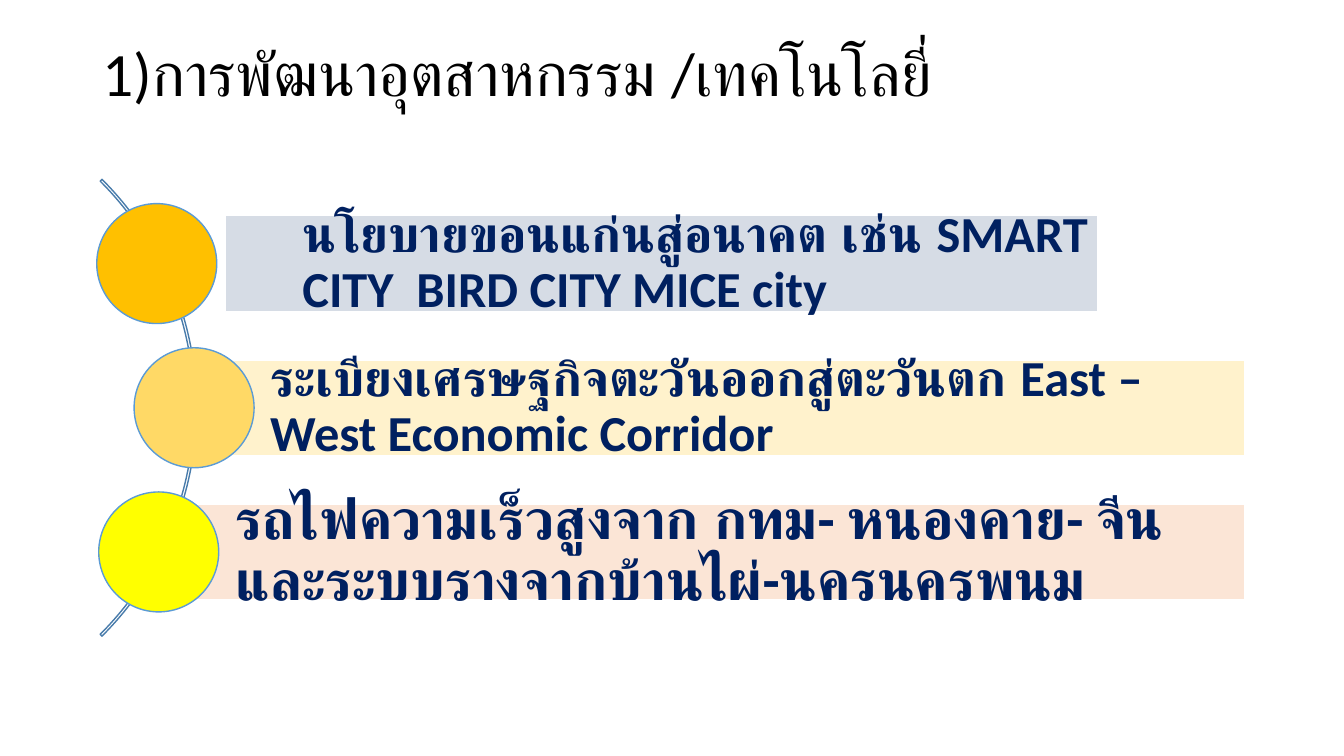
from pptx import Presentation
from pptx.dml.color import RGBColor
from pptx.enum.shapes import MSO_SHAPE as Kind
from pptx.enum.text import MSO_ANCHOR as Anchor, PP_ALIGN as Align
from pptx.util import Inches, Pt

WIDE, HIGH = Inches(13.33), Inches(7.5)
BLACK = RGBColor(0x00, 0x00, 0x00)
WHITE = RGBColor(0xFF, 0xFF, 0xFF)
NAVY = RGBColor(0x00, 0x20, 0x60)
BLUE = RGBColor(0x5B, 0x9B, 0xD5)
STEEL = RGBColor(0x49, 0x7C, 0xAB)
GREY = RGBColor(0xD6, 0xDC, 0xE5)
CREAM = RGBColor(0xFF, 0xF2, 0xCC)
PEACH = RGBColor(0xFB, 0xE5, 0xD6)
AMBER = RGBColor(0xFF, 0xC0, 0x00)
GOLD = RGBColor(0xFF, 0xD9, 0x66)
YELLOW = RGBColor(0xFF, 0xFF, 0x00)

# Rows of the list, in percent of the slide height
TOP, STEP, BAR = 28.53, 19.07, 12.67
# Dot and arc diameters, in inches
DOT, ARC = Inches(1.19), Inches(6.41)

# Bar left and right, dot centre (percent of width), colours, size, words
ITEMS = [
    (16.8, 81.69, 11.66, GREY, AMBER, 36,
     "นโยบายขอนแก่นสู่อนาคต เช่น SMART CITY  BIRD CITY MICE city"),
    (14.4, 92.63, 14.44, CREAM, GOLD, 36,
     "ระเบียงเศรษฐกิจตะวันออกสู่ตะวันตก East –West Economic Corridor"),
    (11.85, 92.63, 11.81, PEACH, YELLOW, 40,
     "รถไฟความเร็วสูงจาก กทม- หนองคาย- จีน และระบบรางจากบ้านไผ่-นครนครพนม"),
]


def across(share):
    return round(WIDE * share / 100)


def down(share):
    return round(HIGH * share / 100)


def middle(row):
    return down(TOP + row * STEP + BAR / 2)


def add_shape(slide, kind, box, fill, line):
    shape = slide.shapes.add_shape(kind, *box)
    shape.shadow.inherit = False
    if fill is None:
        shape.fill.background()
    else:
        shape.fill.solid()
        shape.fill.fore_color.rgb = fill
    shape.line.color.rgb = line
    shape.line.width = Pt(1)
    return shape


def add_round(slide, kind, x, y, size, fill, line):
    box = (x - size // 2, y - size // 2, size, size)
    return add_shape(slide, kind, box, fill, line)


def write(shape, words, size, color, bold=False):
    frame = shape.text_frame
    frame.word_wrap = True
    frame.vertical_anchor = Anchor.MIDDLE
    para = frame.paragraphs[0]
    para.alignment = Align.LEFT
    para.line_spacing = 0.9
    run = para.add_run()
    run.text = words
    font = run.font
    font.name, font.size, font.bold = "Calibri", Pt(size), bold
    font.color.rgb = color
    return para


def add_title(slide, words):
    box = slide.shapes.add_textbox(
        across(6.9), down(5.33), across(86.27), down(19.33))
    para = write(box, words, 44, BLACK)
    para.add_line_break()
    para.font.size = Pt(44)


def add_arc(slide):
    arc = add_round(slide, Kind.BLOCK_ARC, across(-9.41), middle(1),
                    ARC, None, STEEL)
    for i, value in enumerate((189, 27, 0.004)):
        arc.adjustments[i] = value


def add_item(slide, row, left, right, centre, tint, color, size, words):
    box = (across(left), down(TOP + row * STEP),
           across(right - left), down(BAR))
    bar = add_shape(slide, Kind.RECTANGLE, box, tint, WHITE)
    frame = bar.text_frame
    frame.margin_left = Inches(0.76)
    frame.margin_right = frame.margin_top = frame.margin_bottom = Inches(0.1)
    write(bar, words, size, NAVY, True)
    add_round(slide, Kind.OVAL, across(centre), middle(row), DOT, color, BLUE)


def main():
    deck = Presentation()
    deck.slide_width, deck.slide_height = WIDE, HIGH
    slide = deck.slides.add_slide(deck.slide_layouts[6])
    add_title(slide, "1)การพัฒนาอุตสาหกรรม /เทคโนโลยี่")
    add_arc(slide)
    for row, item in enumerate(ITEMS):
        add_item(slide, row, *item)
    deck.save("out.pptx")


if __name__ == "__main__":
    main()
